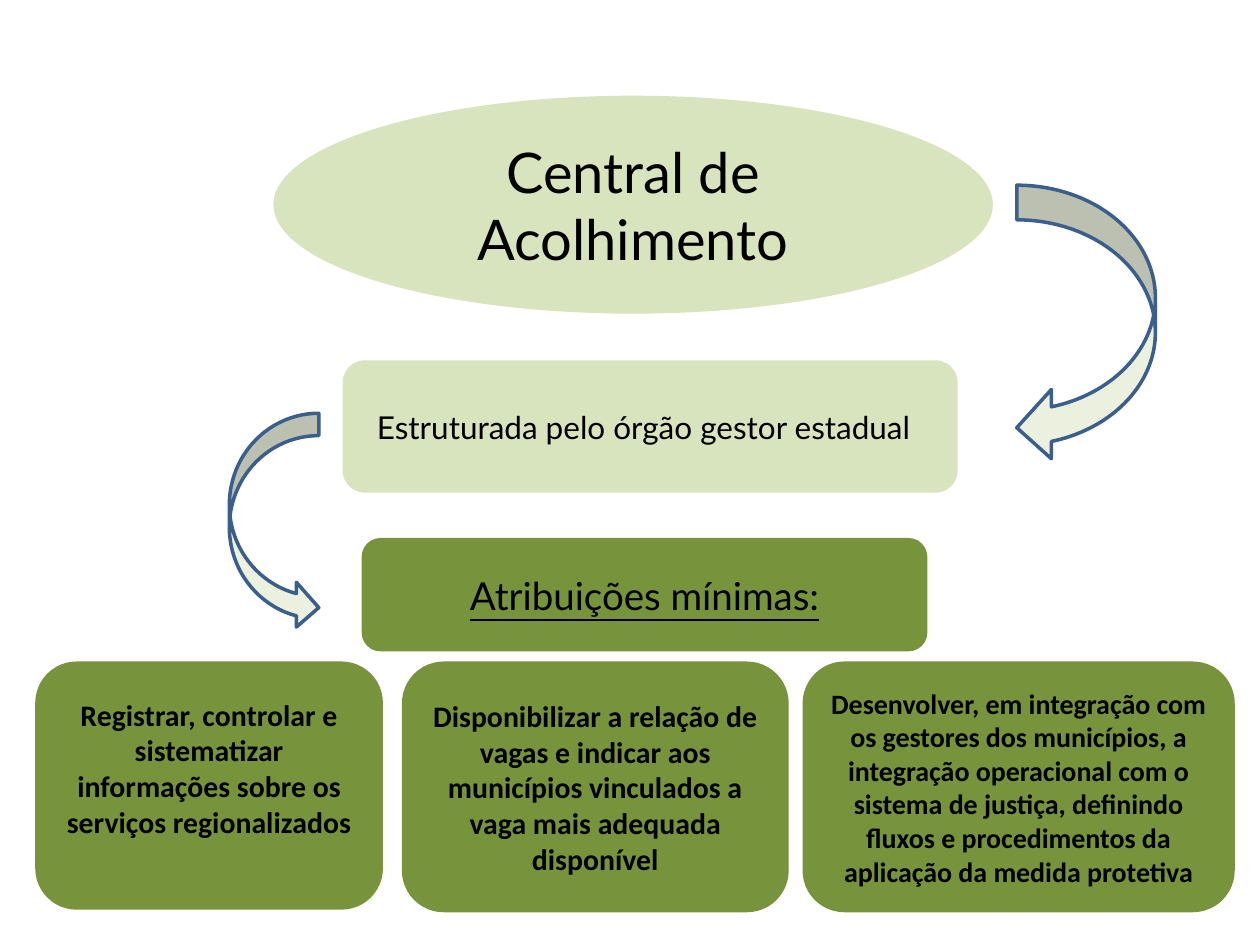
from pptx import Presentation
from pptx.dml.color import RGBColor
from pptx.enum import shapes, text
from pptx.util import Inches, Pt

LIGHT, DARK, PALE, EDGE, INK = "D7E4BD", "77933C", "EBF1DE", "3A5F8C", "000000"
SHAPE = shapes.MSO_SHAPE


def rgb(value):
    return RGBColor.from_string(value)


def add_shape(s, kind, box, fill):
    sp = s.shapes.add_shape(kind, *(Inches(v) for v in box))
    sp.shadow.inherit = False
    sp.fill.solid()
    sp.fill.fore_color.rgb = rgb(fill)
    sp.line.fill.background()
    return sp


def add_label(s, kind, box, fill, words, size, font="Lato", bold=False,
              underline=False, align=text.PP_ALIGN.CENTER):
    sp = add_shape(s, kind, box, fill)
    tf = sp.text_frame
    tf.word_wrap = True
    tf.vertical_anchor = text.MSO_ANCHOR.MIDDLE
    tf.text = words
    p = tf.paragraphs[0]
    p.alignment = align
    f = p.runs[0].font
    f.name, f.size, f.bold, f.underline = font, Pt(size), bold, underline
    f.color.rgb = rgb(INK)
    return tf


def add_arrow(s, kind, box):
    sp = add_shape(s, kind, box, PALE)
    sp.line.color.rgb = rgb(EDGE)
    sp.line.width = Pt(2)


def add_hierarchy(s):
    add_label(s, SHAPE.OVAL, (2.17, 0.76, 5.71, 1.73), LIGHT,
              "Central de Acolhimento", 32)
    tf = add_label(s, SHAPE.ROUNDED_RECTANGLE, (2.72, 2.86, 4.88, 1.05), LIGHT,
                   "Estruturada pelo órgão gestor estadual", 18,
                   align=text.PP_ALIGN.JUSTIFY)
    tf.margin_left = Inches(0.22)
    add_label(s, SHAPE.ROUNDED_RECTANGLE, (2.87, 4.27, 4.49, 0.9), DARK,
              "Atribuições mínimas:", 22, underline=True)
    add_arrow(s, SHAPE.CURVED_LEFT_ARROW, (8.07, 1.47, 1.1, 2.2))
    add_arrow(s, SHAPE.CURVED_RIGHT_ARROW, (1.82, 3.28, 0.71, 1.72))


def add_duties(s, top):
    """Row of duty cards; each has left, width, height, size, bottom inset, words."""
    duties = [
        (0.28, 2.76, 1.97, 17, 0.33,
         "Registrar, controlar e sistematizar informações sobre os serviços "
         "regionalizados"),
        (3.19, 3.07, 1.99, 17, 0.05,
         "Disponibilizar a relação de vagas e indicar aos municípios vinculados "
         "a vaga mais adequada disponível"),
        (6.37, 3.43, 1.99, 16, 0.05,
         "Desenvolver, em integração com os gestores dos municípios, a integração "
         "operacional com o sistema de justiça, definindo fluxos e procedimentos "
         "da aplicação da medida protetiva"),
    ]
    for left, width, height, size, inset, words in duties:
        tf = add_label(s, SHAPE.ROUNDED_RECTANGLE, (left, top, width, height), DARK,
                       words, size, font="Calibri", bold=True)
        tf.margin_bottom = Inches(inset)


def main():
    prs = Presentation()
    prs.slide_width, prs.slide_height = Inches(10), Inches(7.5)
    s = prs.slides.add_slide(prs.slide_layouts[6])
    add_hierarchy(s)
    add_duties(s, 5.25)
    prs.save("out.pptx")


if __name__ == "__main__":
    main()
